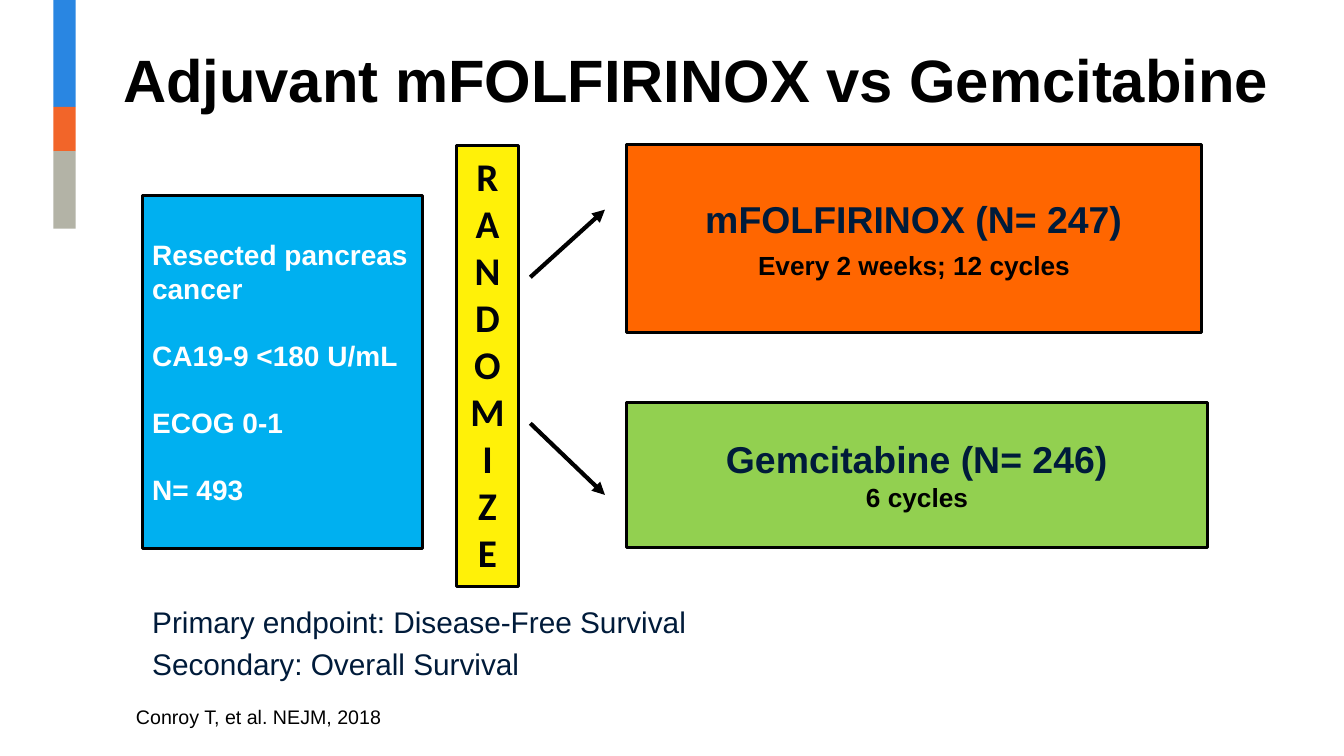
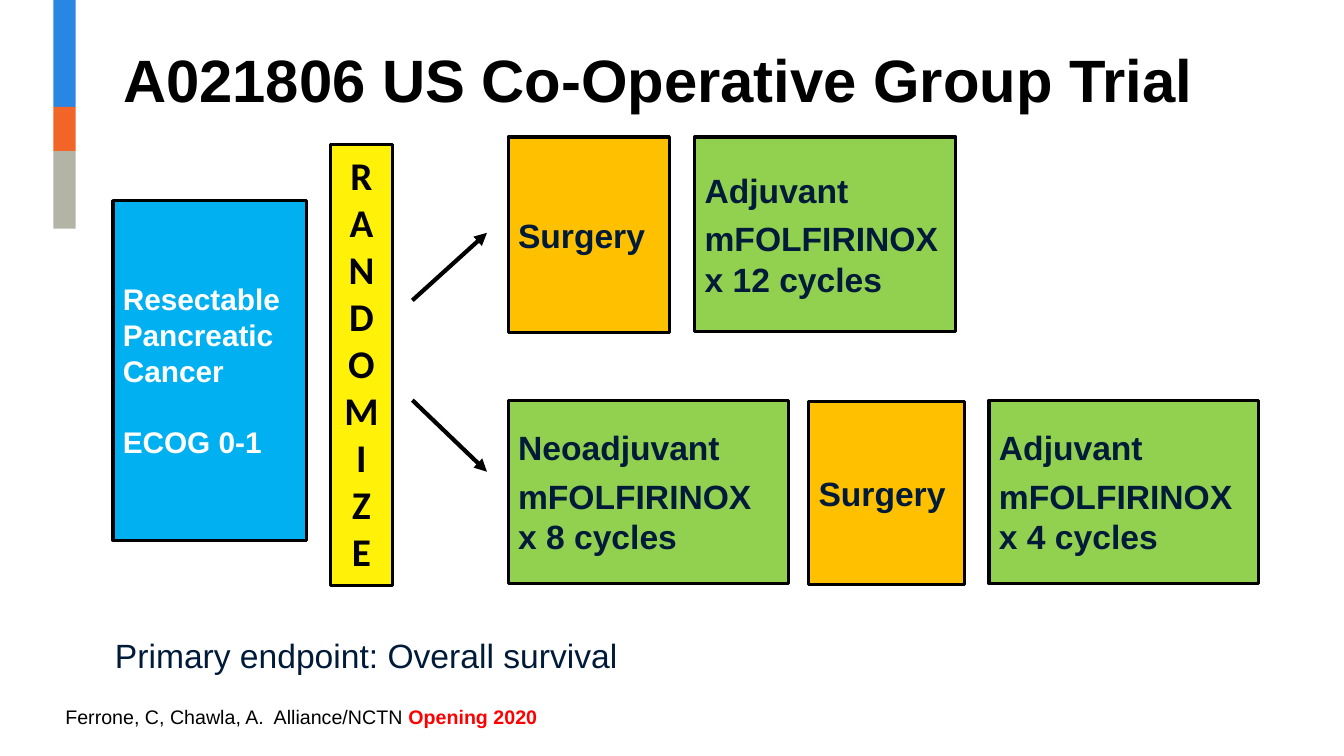
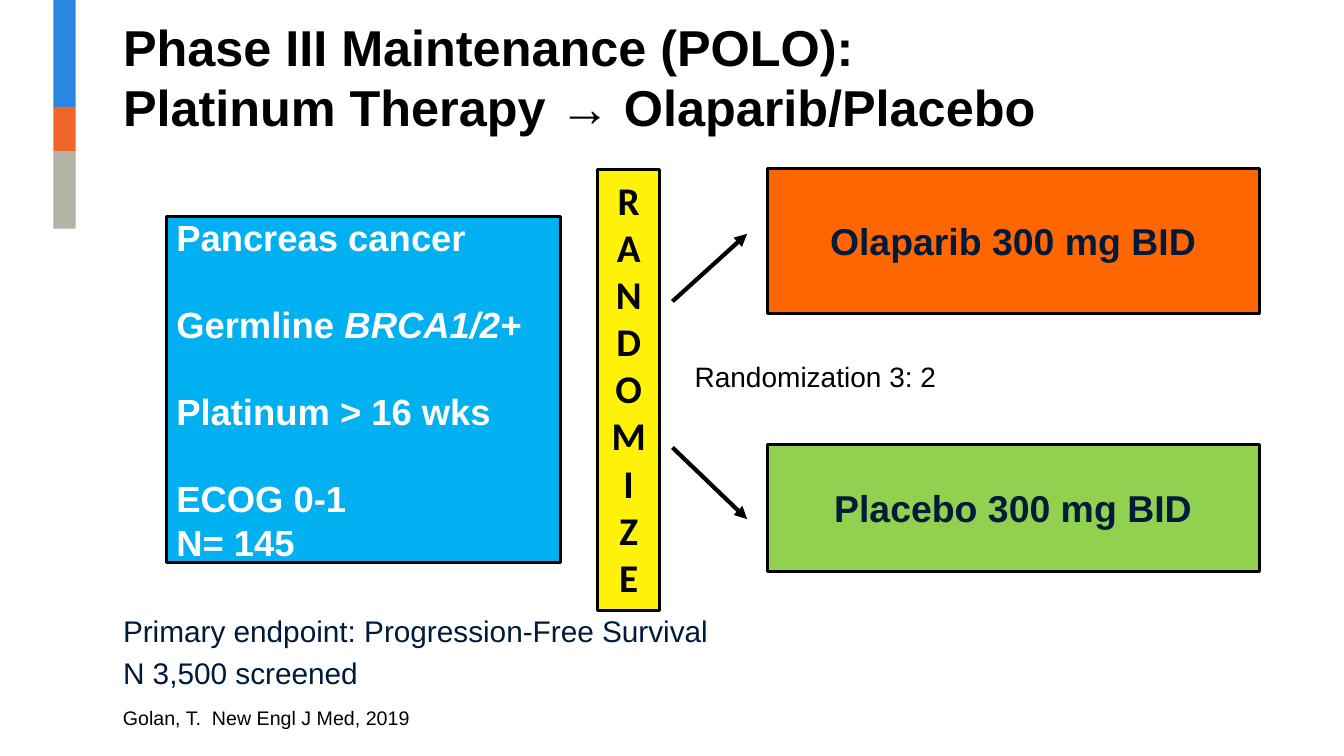
"""Build three slides on pancreatic cancer trial designs."""
from lxml import etree
from pptx import Presentation
from pptx.dml.color import RGBColor
from pptx.enum.shapes import MSO_CONNECTOR, MSO_SHAPE
from pptx.enum.text import MSO_ANCHOR, MSO_AUTO_SIZE, PP_ALIGN
from pptx.oxml.ns import qn
from pptx.util import Inches, Pt

BLACK = RGBColor(0x00, 0x00, 0x00)
WHITE = RGBColor(0xFF, 0xFF, 0xFF)
NAVY = RGBColor(0x00, 0x1B, 0x3A)
INK = RGBColor(0x00, 0x02, 0x08)
RED = RGBColor(0xFF, 0x00, 0x00)
SKY = RGBColor(0x00, 0xB0, 0xF0)
ORANGE = RGBColor(0xFF, 0x66, 0x00)
AMBER = RGBColor(0xFF, 0xC0, 0x00)
GREEN = RGBColor(0x92, 0xD0, 0x50)
YELLOW = RGBColor(0xFF, 0xF1, 0x08)
BAND_BLUE = RGBColor(0x29, 0x86, 0xE2)
BAND_ORANGE = RGBColor(0xF2, 0x65, 0x29)
BAND_GREY = RGBColor(0xB3, 0xB3, 0xA6)
BANDS = [(0, 1.06, BAND_BLUE), (1.06, 0.44, BAND_ORANGE), (1.5, 0.77, BAND_GREY)]

RECTANGLE = MSO_SHAPE.RECTANGLE
STRAIGHT = MSO_CONNECTOR.STRAIGHT
LEFT, CENTER = PP_ALIGN.LEFT, PP_ALIGN.CENTER
TOP, MIDDLE, BOTTOM = MSO_ANCHOR.TOP, MSO_ANCHOR.MIDDLE, MSO_ANCHOR.BOTTOM
NO_FIT, GROW = MSO_AUTO_SIZE.NONE, MSO_AUTO_SIZE.SHAPE_TO_FIT_TEXT


def write(box, paras, size=24, color=BLACK, bold=False, font="Arial", align=LEFT,
          anchor=TOP, wrap=True, fit=NO_FIT, gaps=(), plain=False):
    """Fill a shape with paragraphs of spans; gaps are points before each later paragraph."""
    frame = box.text_frame
    frame.word_wrap, frame.auto_size, frame.vertical_anchor = wrap, fit, anchor
    for index, spans in enumerate(paras):
        para = frame.add_paragraph() if index else frame.paragraphs[0]
        if plain:
            properties = para._p.get_or_add_pPr()
            properties.set("marL", "0")
            properties.set("indent", "0")
            etree.SubElement(properties, qn("a:buNone"))
        para.alignment = align
        para.space_before = Pt(gaps[index - 1] if 0 < index <= len(gaps) else 0)
        for span in [spans] if isinstance(spans, str) else spans:
            text, changes = (span, {}) if isinstance(span, str) else span
            look = {"size": size, "color": color, "bold": bold, "italic": False, **changes}
            for number, line in enumerate(text.split("\n")):
                if number:
                    para.add_line_break()
                if line:
                    run = para.add_run()
                    run.text = line
                    run.font.name = font
                    run.font.size = Pt(look["size"])
                    run.font.bold = look["bold"]
                    run.font.italic = look["italic"]
                    run.font.color.rgb = look["color"]


class TrialDeck:
    """Holds the deck, its style and the current page."""

    def __init__(self):
        """Open an empty widescreen deck."""
        self.deck = Presentation()
        self.deck.slide_width, self.deck.slide_height = Inches(13.33), Inches(7.5)
        self.page = None

    def add_page(self, title, top=0.33, width=12.09, size=42.7):
        """Start a page with its title; the first one also sets up the master."""
        first = self.page is None
        self.page = self.deck.slides.add_slide(self.deck.slide_layouts[1])
        if first:
            self.add_master_bands()
        heading = self.page.shapes.title
        self.place(heading, 1.12, top, width, 0.86)
        write(heading, [title], size=size, bold=True, anchor=BOTTOM)

    def add_master_bands(self):
        """Put the coloured side bands on the slide master."""
        for number, (top, height, color) in enumerate(BANDS):
            band = self.rectangle(0.53, top, 0.22, height, color)
            band.line.fill.background()
            band.name = f"Side band {number + 1}"
            band.element.nvSpPr.cNvPr.set("id", str(20 + number))
            self.deck.slide_master.shapes.element.append(band.element)

    def place(self, box, left, top, width, height):
        """Move and size a shape in inches."""
        box.left, box.top = Inches(left), Inches(top)
        box.width, box.height = Inches(width), Inches(height)

    def rectangle(self, left, top, width, height, fill):
        """Draw an outlined rectangle."""
        box = self.page.shapes.add_shape(
            RECTANGLE, Inches(left), Inches(top), Inches(width), Inches(height))
        box.shadow.inherit = False
        box.fill.solid()
        box.fill.fore_color.rgb = fill
        box.line.color.rgb = BLACK
        box.line.width = Pt(2.25)
        return box

    def card(self, left, top, width, height, fill, paras, **look):
        """Draw a rectangle with bold text in its middle."""
        look = {"color": NAVY, "bold": True, "anchor": MIDDLE, **look}
        write(self.rectangle(left, top, width, height, fill), paras, **look)

    def randomize(self, left, top):
        """Draw the tall RANDOMIZE bar, one letter a line."""
        bar = self.rectangle(left, top, 0.61, 4.38, YELLOW)
        frame = bar.text_frame
        frame.margin_left = frame.margin_right = Inches(0.13)
        frame.margin_top = frame.margin_bottom = Inches(0.07)
        write(bar, list("RANDOMIZE"), size=28, color=INK, bold=True, font="Calibri",
              align=CENTER, wrap=False, fit=GROW)

    def arrows(self, left, upper, lower):
        """Draw the rising and the falling arrow to the two arms."""
        for start, rise in ((upper, -0.67), (lower, 0.71)):
            arrow = self.page.shapes.add_connector(
                STRAIGHT, Inches(left), Inches(start),
                Inches(left + 0.74), Inches(start + rise))
            arrow.line.color.rgb = BLACK
            arrow.line.width = Pt(3)
            etree.SubElement(arrow.line._get_or_add_ln(), qn("a:tailEnd"), type="triangle")
            etree.SubElement(arrow.element.spPr, qn("a:effectLst"))

    def endpoints(self, left, top, width, height, paras, size=21.3):
        """Fill the body placeholder with the endpoints."""
        body = self.page.placeholders[1]
        self.place(body, left, top, width, height)
        write(body, paras, size=size, color=NAVY, gaps=[4.3], plain=True)

    def note(self, left, top, width, height, spans, size=14, wrap=True):
        """Add a plain line of text."""
        box = self.page.shapes.add_textbox(
            Inches(left), Inches(top), Inches(width), Inches(height))
        write(box, [spans], size=size, wrap=wrap, fit=GROW)


def adjuvant_page(trial):
    """Draw the adjuvant trial."""
    trial.add_page("Adjuvant mFOLFIRINOX vs Gemcitabine")
    trial.endpoints(1.41, 5.94, 11.14, 0.8, [
        "Primary endpoint: Disease-Free Survival", "Secondary: Overall Survival"])
    trial.card(1.41, 1.94, 2.78, 3.5, SKY, [
        "Resected pancreas cancer", "CA19-9 <180 U/mL", "ECOG 0-1", "N= 493"],
        size=20, color=WHITE, gaps=[24, 24, 24])
    detail = {"size": 18.7, "color": BLACK}
    trial.card(6.21, 1.43, 5.71, 1.87, ORANGE, [
        "mFOLFIRINOX (N= 247)", [("Every 2 weeks; 12 cycles", detail)]],
        size=26.7, align=CENTER, gaps=[6])
    trial.card(6.21, 3.99, 5.77, 1.44, GREEN, [
        ["Gemcitabine (N= 246)\n", ("6 cycles", detail)]], size=26.7, align=CENTER)
    trial.arrows(5.26, 2.75, 4.2)
    trial.randomize(4.53, 1.44)
    trial.note(1.25, 6.94, 5.06, 0.34, "Conroy T, et al. NEJM, 2018")


def cooperative_page(trial):
    """Draw the perioperative trial."""
    trial.add_page("A021806 US Co-Operative Group Trial", width=11.2)
    trial.endpoints(1.04, 6.25, 11.7, 0.6, ["Primary endpoint: Overall survival"], size=24)
    trial.card(1.12, 1.99, 1.92, 3.37, SKY, ["Resectable Pancreatic Cancer", "ECOG 0-1"],
               size=21.3, color=WHITE, gaps=[25.5])
    steps = [
        (5.04, 1.36, 1.6, 1.94, AMBER, ["Surgery"]),
        (6.89, 1.36, 2.59, 1.93, GREEN, ["Adjuvant", "mFOLFIRINOX", "x 12 cycles"]),
        (5.04, 3.97, 2.78, 1.82, GREEN, ["Neoadjuvant", "mFOLFIRINOX", "x 8 cycles"]),
        (8.02, 3.98, 1.55, 1.82, AMBER, ["Surgery"]),
        (9.81, 3.97, 2.67, 1.82, GREEN, ["Adjuvant", "mFOLFIRINOX x 4 cycles"]),
    ]
    for step in steps:
        trial.card(*step, gaps=[6])
    trial.arrows(4.09, 2.98, 3.97)
    trial.randomize(3.28, 1.43)
    trial.note(0.55, 6.94, 5.76, 0.34, [
        "Ferrone, C, Chawla, A.  Alliance/NCTN ",
        ("Opening 2020", {"color": RED, "bold": True})])


def maintenance_page(trial):
    """Draw the maintenance trial."""
    trial.add_page("Phase III Maintenance (POLO):\nPlatinum Therapy → Olaparib/Placebo",
                   top=0.55, size=36)
    trial.endpoints(1.12, 6.03, 11.43, 0.9, [
        "Primary endpoint: Progression-Free Survival", "N 3,500 screened"])
    trial.card(1.65, 2.15, 3.91, 3.43, SKY, [
        "Pancreas cancer", ["Germline ", ("BRCA1/2", {"italic": True}), "+"],
        "Platinum > 16 wks", "ECOG 0-1", "N= 145"],
        size=26, color=WHITE, gaps=[31, 31, 31])
    trial.card(7.61, 1.67, 4.88, 1.44, ORANGE, ["Olaparib 300 mg BID"],
               size=26.7, align=CENTER)
    trial.card(7.61, 4.41, 4.88, 1.26, GREEN, ["Placebo 300 mg BID"],
               size=26.7, align=CENTER)
    trial.arrows(6.67, 2.99, 4.44)
    trial.randomize(5.93, 1.68)
    trial.note(1.12, 6.95, 5.55, 0.34, "Golan, T.  New Engl J Med, 2019")
    trial.note(6.79, 3.52, 2.62, 0.44, "Randomization 3: 2", size=20, wrap=False)


def main():
    """Build and save the deck."""
    trial = TrialDeck()
    adjuvant_page(trial)
    cooperative_page(trial)
    maintenance_page(trial)
    trial.deck.save("out.pptx")


if __name__ == "__main__":
    main()
